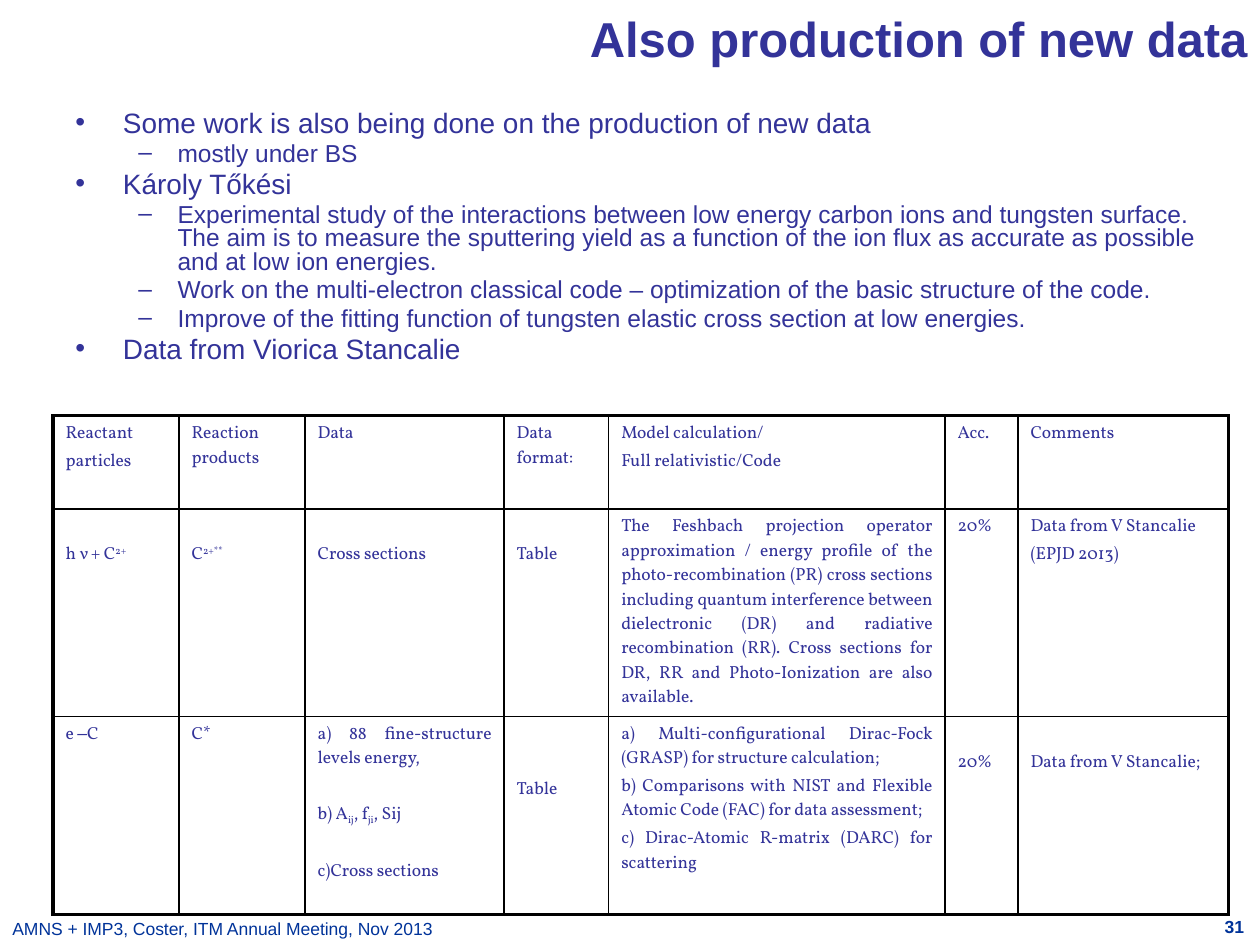
from dataclasses import dataclass

from lxml.etree import SubElement
from pptx import Presentation
from pptx.dml.color import RGBColor
from pptx.enum.text import MSO_ANCHOR, PP_ALIGN
from pptx.oxml import parse_xml
from pptx.oxml.ns import nsdecls, qn
from pptx.util import Cm, Pt

INDIGO = RGBColor(0x33, 0x33, 0x99)
BLUE = RGBColor(0x00, 0x33, 0x99)
BLACK = RGBColor(0x00, 0x00, 0x00)

SUPERSCRIPT, SUBSCRIPT = 30, -25

BULLETS = [
    (0, "Some work is also being done on the production of new data"),
    (1, "mostly under BS"),
    (0, "Károly Tőkési"),
    (1, "Experimental study of the interactions between low energy carbon ions and "
        "tungsten surface. The aim is to measure the sputtering yield as a function of "
        "the ion flux as accurate as possible and at low ion energies."),
    (1, "Work on the multi-electron classical code – optimization of the basic "
        "structure of the code."),
    (1, "Improve of the fitting function of tungsten elastic cross section at low energies."),
    (0, "Data from Viorica Stancalie"),
]
# Bullet sign, size, left margin and hanging indent (cm) of each level
LEVELS = [("•", 16, 0.96, 0.96), ("–", 14, 2.06, 0.79)]


@dataclass
class Entry:
    """Table cell; a paragraph is a string or a list of (text, baseline, font) pieces."""
    paragraphs: list
    lines_down: int = 0
    justified: bool = False
    gap: float = 2


COLUMN_WIDTHS = [2.54, 2.54, 4.01, 2.11, 6.78, 1.47, 4.24]
ROW_HEIGHTS = [1.88, 4.18, 3.99]
ROWS = [
    [
        Entry(["Reactant", "particles"]),
        Entry(["Reaction", "products"], gap=0),
        Entry(["Data"]),
        Entry(["Data format:"]),
        Entry(["Model calculation/", "Full relativistic/Code"]),
        Entry(["Acc."]),
        Entry(["Comments"]),
    ],
    [
        Entry([[("h ν + C", 0, None), ("2+", SUPERSCRIPT, None)]], lines_down=1),
        Entry([[("C", 0, None), ("2+**", SUPERSCRIPT, None)]], lines_down=1),
        Entry(["Cross sections"], lines_down=1),
        Entry(["Table"], lines_down=1),
        Entry(["The Feshbach projection operator approximation / energy profile of the "
               "photo-recombination (PR) cross sections including quantum interference "
               "between dielectronic (DR) and radiative recombination (RR). Cross sections "
               "for DR, RR and Photo-Ionization are also available."], justified=True),
        Entry(["20%"]),
        Entry(["Data from V Stancalie", "(EPJD 2013)"]),
    ],
    [
        Entry([[("e ", 0, None), ("–", 0, "Arial"), ("C", 0, None)]]),
        Entry(["C*"]),
        Entry(["a) 88 fine-structure levels energy,",
               [("b) A", 0, None), ("ij", SUBSCRIPT, None), (", f", 0, None),
                ("ji", SUBSCRIPT, None), (", Sij", 0, None)],
               "c)Cross sections"], justified=True, gap=18),
        Entry(["Table"], lines_down=2),
        Entry(["a) Multi-configurational Dirac-Fock (GRASP) for structure calculation;",
               "b) Comparisons with NIST and Flexible Atomic Code (FAC) for data assessment;",
               "c) Dirac-Atomic R-matrix (DARC) for scattering"], justified=True),
        Entry(["20%"], lines_down=1),
        Entry(["Data from V Stancalie;"], lines_down=1),
    ],
]


class SlideBuilder:
    font_name = "Arial"
    table_font = "Vollkorn"
    table_size = 10
    cell_margin, line_step = 0.13, 0.56
    outer_line, inner_line = 2.25, 1

    def __init__(self, slide):
        self.slide = slide

    def style(self, font, size, color, bold=False, name=None):
        font.name = name or self.font_name
        font.size = Pt(size)
        font.bold = bold
        font.color.rgb = color

    def text_box(self, left, top, width, height):
        box = self.slide.shapes.add_textbox(Cm(left), Cm(top), Cm(width), Cm(height))
        box.text_frame.word_wrap = True
        return box.text_frame

    def label(self, text, position, size, color, bold=False,
              align=PP_ALIGN.LEFT, anchor=MSO_ANCHOR.TOP):
        text_frame = self.text_box(*position)
        text_frame.text = text
        text_frame.vertical_anchor = anchor
        paragraph = text_frame.paragraphs[0]
        paragraph.alignment = align
        self.style(paragraph.runs[0].font, size, color, bold)

    def bullet_list(self, items, position, color):
        text_frame = self.text_box(*position)
        text_frame.text = "\n".join(text for _, text in items)
        for index, (paragraph, (level, _)) in enumerate(zip(text_frame.paragraphs, items)):
            sign, size, margin, hanging = LEVELS[level]
            paragraph.level = level
            paragraph.line_spacing = 0.8
            paragraph.space_before = Pt(size * 0.2 if index else 0)
            properties = paragraph._p.get_or_add_pPr()
            properties.set("marL", str(Cm(margin)))
            properties.set("indent", str(-Cm(hanging)))
            SubElement(properties, qn("a:buFont")).set("typeface", self.font_name)
            SubElement(properties, qn("a:buChar")).set("char", sign)
            self.style(paragraph.runs[0].font, size, color)

    def table(self, rows, left, top, color):
        shape = self.slide.shapes.add_table(
            len(rows), len(COLUMN_WIDTHS), Cm(left), Cm(top),
            Cm(sum(COLUMN_WIDTHS)), Cm(sum(ROW_HEIGHTS)))
        table = shape.table
        table.first_row = table.horz_banding = False
        for column, width in zip(table.columns, COLUMN_WIDTHS):
            column.width = Cm(width)
        for row, height in zip(table.rows, ROW_HEIGHTS):
            row.height = Cm(height)
        last_row, last_column = len(rows) - 1, len(COLUMN_WIDTHS) - 1
        for i, entries in enumerate(rows):
            for j, entry in enumerate(entries):
                cell = table.cell(i, j)
                self.fill_cell(cell, entry, color)
                self.cell_borders(cell, {"L": j == 0, "R": j == last_column,
                                         "T": i == 0, "B": i == last_row})

    def fill_cell(self, cell, entry, color):
        cell.fill.background()
        cell.margin_top = Cm(self.cell_margin + entry.lines_down * self.line_step)
        text_frame = cell.text_frame
        for index, content in enumerate(entry.paragraphs):
            paragraph = text_frame.add_paragraph() if index else text_frame.paragraphs[0]
            paragraph.alignment = PP_ALIGN.JUSTIFY if entry.justified else PP_ALIGN.LEFT
            paragraph.space_before = Pt(entry.gap if index else 0)
            pieces = [(content, 0, None)] if isinstance(content, str) else content
            for text, baseline, font_name in pieces:
                run = paragraph.add_run()
                run.text = text
                self.style(run.font, self.table_size, color, name=font_name or self.table_font)
                if baseline:
                    run._r.get_or_add_rPr().set("baseline", str(baseline * 1000))

    def cell_borders(self, cell, outer_sides):
        properties = cell._tc.get_or_add_tcPr()
        for position, (side, is_outer) in enumerate(outer_sides.items()):
            width = Pt(self.outer_line if is_outer else self.inner_line)
            properties.insert(position, parse_xml(
                f'<a:ln{side} {nsdecls("a")} w="{width}"><a:solidFill>'
                f'<a:srgbClr val="{BLACK}"/></a:solidFill></a:ln{side}>'))


def main():
    presentation = Presentation()
    presentation.slide_width, presentation.slide_height = Cm(25.4), Cm(19.05)
    builder = SlideBuilder(presentation.slides.add_slide(presentation.slide_layouts[6]))

    # Footer and page number
    builder.label("AMNS + IMP3, Coster, ITM Annual Meeting, Nov 2013",
                  (0, 18.39, 10.74, 0.66), 10, BLUE)
    builder.label("31", (23.22, 18.34, 2.11, 0.71), 10, BLUE, bold=True, align=PP_ALIGN.RIGHT)

    # Title
    builder.label("Also production of new data", (9.5, 0, 15.9, 1.52), 28, INDIGO,
                  bold=True, align=PP_ALIGN.RIGHT, anchor=MSO_ANCHOR.MIDDLE)

    # Body
    builder.bullet_list(BULLETS, (1.27, 2.13, 23.62, 5.59), INDIGO)

    # Data table
    builder.table(ROWS, 1.07, 8.38, INDIGO)

    presentation.save("out.pptx")


if __name__ == "__main__":
    main()
